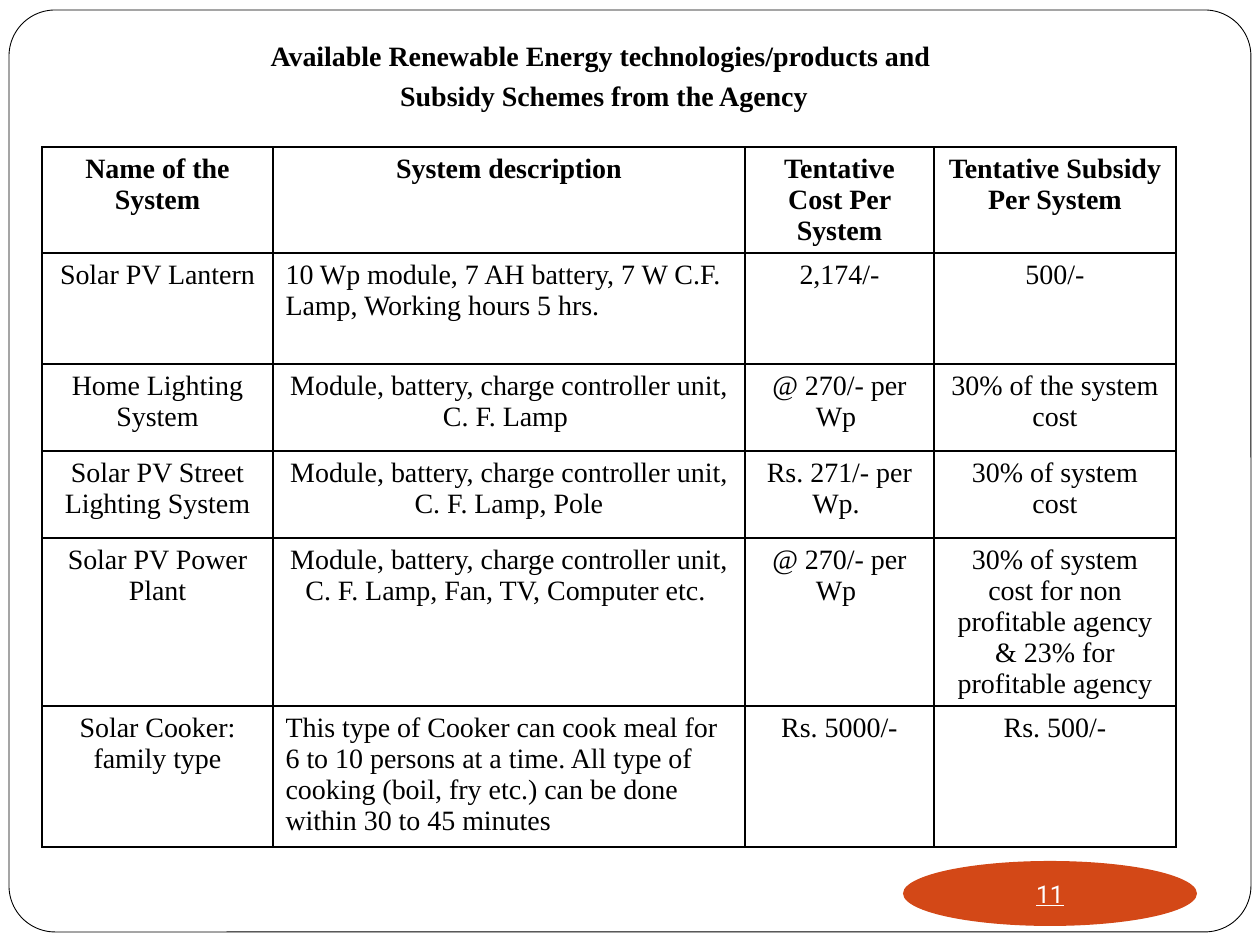
from typing import NamedTuple

from lxml import etree
from pptx import Presentation
from pptx.dml.color import RGBColor
from pptx.enum.shapes import MSO_SHAPE
from pptx.enum.text import MSO_ANCHOR, PP_ALIGN
from pptx.oxml.ns import qn
from pptx.util import Emu, Pt

CENTER, LEFT = PP_ALIGN.CENTER, PP_ALIGN.LEFT
MIDDLE = MSO_ANCHOR.MIDDLE
ROUNDED, OVAL = MSO_SHAPE.ROUNDED_RECTANGLE, MSO_SHAPE.OVAL

PX = 914400 / 126
COLORS = {"ink": "000000", "paper": "FFFFFF", "badge": "D34817"}
SERIF, SANS = "Times New Roman", "Roboto"


class Box(NamedTuple):
    left: int
    top: int
    width: int
    height: int


class Scheme(NamedTuple):
    height: int
    system: str
    description: str
    cost: str
    subsidy: str
    description_align: PP_ALIGN = CENTER


COLUMN_WIDTHS = (231, 472, 189, 242)
SCHEMES = (
    Scheme(96, "Name of the System", "System description",
           "Tentative Cost Per System", "Tentative Subsidy Per System"),
    Scheme(111, "Solar PV Lantern",
           "10 Wp module, 7 AH battery, 7 W C.F. Lamp, Working hours 5 hrs.",
           "2,174/-", "500/-", LEFT),
    Scheme(87, "Home Lighting System",
           "Module, battery, charge controller unit, C. F. Lamp ",
           "@ 270/- per Wp ", "30% of the system cost"),
    Scheme(87, "Solar PV Street Lighting System",
           "Module, battery, charge controller unit, C. F. Lamp, Pole",
           "Rs. 271/- per Wp. ", "30% of system cost"),
    Scheme(161, "Solar PV Power Plant",
           "Module, battery, charge controller unit, C. F. Lamp, Fan, TV, Computer etc. ",
           "@ 270/- per Wp ",
           "30% of system cost for non profitable agency & 23% for profitable agency"),
    Scheme(141, "Solar Cooker: family type",
           "This type of Cooker can cook meal for 6 to 10 persons at a time. "
           "All type of cooking (boil, fry etc.) can be done within 30 to 45 minutes",
           "Rs. 5000/-", "Rs. 500/-", LEFT),
)


def px(length: int) -> Emu:
    return Emu(round(length * PX))


def place(box: Box) -> list[Emu]:
    return [px(length) for length in box]


def color(name: str) -> RGBColor:
    return RGBColor.from_string(COLORS[name])


def style(paragraph, size: int, font: str, ink: str, bold: bool = False,
          align: PP_ALIGN = CENTER) -> None:
    paragraph.alignment = align
    for run in paragraph.runs:
        run.font.size = Pt(size)
        run.font.name = font
        run.font.bold = bold
        run.font.color.rgb = color(ink)


def add_panel(slide, kind: MSO_SHAPE, box: Box, fill: str):
    panel = slide.shapes.add_shape(kind, *place(box))
    panel.shadow.inherit = False
    panel.fill.solid()
    panel.fill.fore_color.rgb = color(fill)
    panel.line.fill.background()
    return panel


def add_borders(cell) -> None:
    properties = cell._tc.get_or_add_tcPr()
    for index, side in enumerate(("a:lnL", "a:lnR", "a:lnT", "a:lnB")):
        border = etree.Element(qn(side), w=str(Pt(1)))
        fill = etree.SubElement(border, qn("a:solidFill"))
        etree.SubElement(fill, qn("a:srgbClr"), val=COLORS["ink"])
        properties.insert(index, border)


def add_scheme_table(slide, box: Box) -> None:
    table = slide.shapes.add_table(len(SCHEMES), len(COLUMN_WIDTHS), *place(box)).table
    for column, width in zip(table.columns, COLUMN_WIDTHS):
        column.width = px(width)
    for row_index, (row, scheme) in enumerate(zip(table.rows, SCHEMES)):
        row.height = px(scheme.height)
        entries = (scheme.system, scheme.description, scheme.cost, scheme.subsidy)
        aligns = (CENTER, scheme.description_align, CENTER, CENTER)
        for cell, entry, align in zip(row.cells, entries, aligns):
            cell.text_frame.text = entry
            style(cell.text_frame.paragraphs[0], 16, SERIF, "ink", row_index == 0, align)
            cell.fill.background()
            add_borders(cell)


def add_title(slide, box: Box, lines: tuple[str, ...]) -> None:
    title = slide.shapes.add_textbox(*place(box)).text_frame
    title.word_wrap = True
    title.text = "\n".join(lines)
    for paragraph in title.paragraphs:
        style(paragraph, 16, SERIF, "ink", True)
        paragraph.space_before = Pt(4)


def add_page_badge(slide, box: Box, number: str) -> None:
    badge = add_panel(slide, OVAL, box, "badge").text_frame
    badge.margin_left = badge.margin_right = badge.margin_top = badge.margin_bottom = 0
    badge.word_wrap = False
    badge.vertical_anchor = MIDDLE
    badge.text = number
    style(badge.paragraphs[0], 14, SANS, "paper")
    badge.paragraphs[0].runs[0].font.underline = True


def main() -> None:
    deck = Presentation()
    deck.slide_width, deck.slide_height = px(1260), px(945)
    slide = deck.slides.add_slide(deck.slide_layouts[6])

    # Rounded page frame
    frame = add_panel(slide, ROUNDED, Box(9, 10, 1242, 922), "paper")
    frame.adjustments[0] = 0.05
    frame.line.color.rgb = color("ink")
    frame.line.width = Pt(0.5)

    # Subsidy table
    table_height = sum(scheme.height for scheme in SCHEMES)
    add_scheme_table(slide, Box(42, 147, sum(COLUMN_WIDTHS), table_height))

    # Page number and title
    add_page_badge(slide, Box(903, 861, 294, 65), "11")
    add_title(slide, Box(32, 32, 1144, 105),
              ("Available Renewable Energy technologies/products and ",
               "Subsidy Schemes from the Agency"))

    deck.save("out.pptx")


if __name__ == "__main__":
    main()
